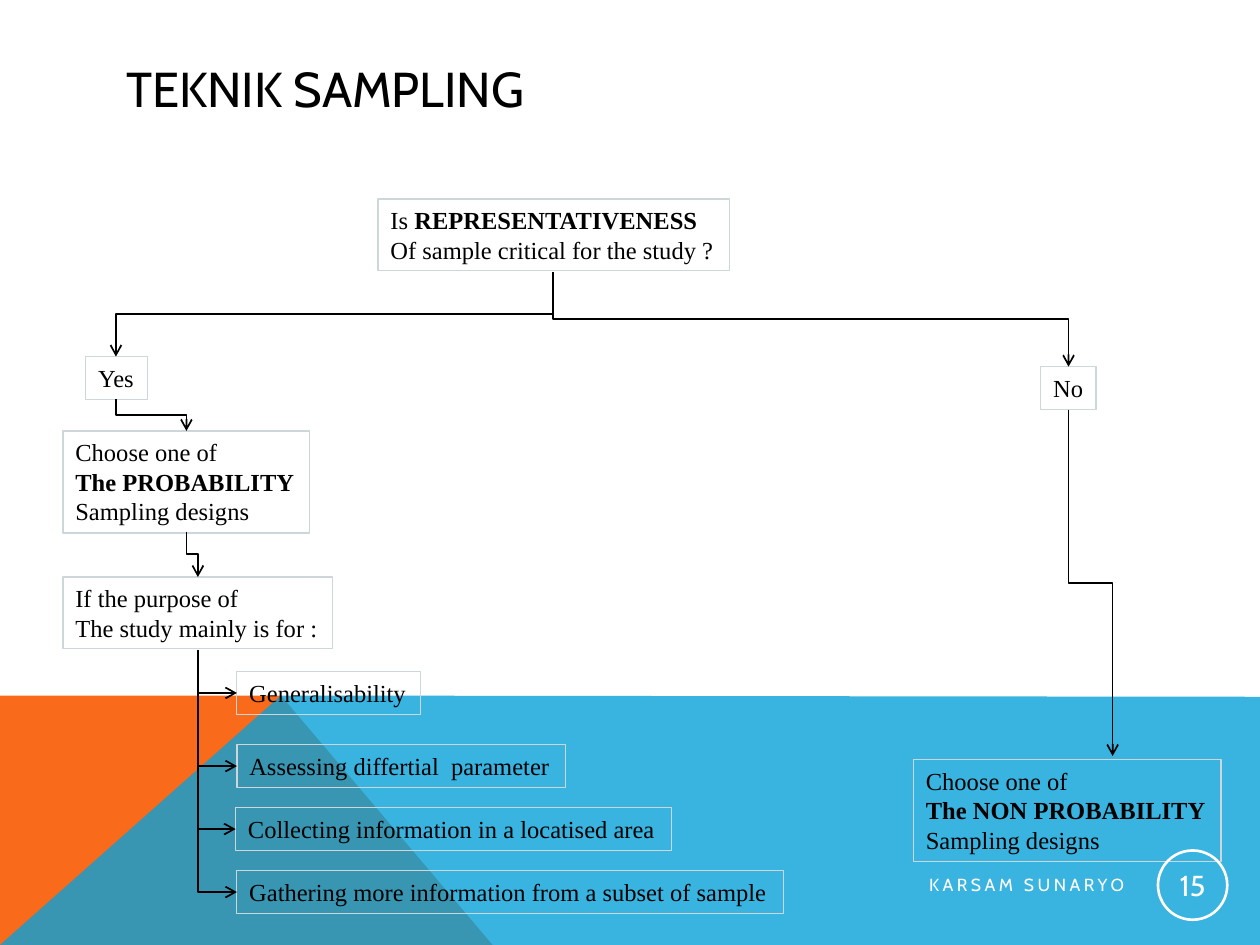
from dataclasses import dataclass

from lxml.etree import SubElement
from pptx import Presentation
from pptx.dml.color import RGBColor
from pptx.enum.shapes import MSO_CONNECTOR, MSO_SHAPE
from pptx.enum.text import MSO_ANCHOR, MSO_AUTO_SIZE, PP_ALIGN
from pptx.oxml.ns import qn
from pptx.util import Inches, Pt

HUES = {
    "black": "000000",
    "white": "FFFFFF",
    "orange": "F96A1B",
    "blue": "08A1D9",
    "frame": "CDD7D9",
}
SERIF, SANS = "Times New Roman", "Cabin"


@dataclass
class Box:
    left: float
    top: float
    width: float
    height: float
    lines: tuple[str, ...]
    bold: str = ""


@dataclass
class Link:
    start: tuple[float, float]
    end: tuple[float, float]
    kind: str = "bentConnector3"


def color(name: str) -> RGBColor:
    return RGBColor.from_string(HUES[name])


def style(item, face: str, size: float, hue: str) -> None:
    item.font.name = face
    item.font.size = Pt(size)
    item.font.color.rgb = color(hue)


def draw_area(slide, points: list, hue: str, alpha: int = 100) -> None:
    spots = [(Inches(x), Inches(y)) for x, y in points]
    builder = slide.shapes.build_freeform(*spots[0], scale=1.0)
    builder.add_line_segments(spots[1:], close=True)
    area = builder.convert_to_shape()
    area.shadow.inherit = False
    area.line.fill.background()
    area.fill.solid()
    area.fill.fore_color.rgb = color(hue)
    if alpha < 100:
        tint = area.fill._xPr.find(".//" + qn("a:srgbClr"))
        SubElement(tint, qn("a:alpha")).set("val", str(alpha * 1000))


def draw_box(slide, box: Box) -> None:
    shape = slide.shapes.add_shape(
        MSO_SHAPE.RECTANGLE,
        *map(Inches, (box.left, box.top, box.width, box.height)))
    shape.shadow.inherit = False
    shape.fill.background()
    shape.line.color.rgb = color("frame")
    shape.line.width = Pt(0.75)
    frame = shape.text_frame
    frame.word_wrap = False
    frame.auto_size = MSO_AUTO_SIZE.SHAPE_TO_FIT_TEXT
    frame.vertical_anchor = MSO_ANCHOR.TOP
    for i, line in enumerate(box.lines):
        para = frame.add_paragraph() if i else frame.paragraphs[0]
        para.alignment = PP_ALIGN.LEFT
        plain, mark, _ = line.partition(box.bold) if box.bold else (line, "", "")
        if plain:
            para.add_run().text = plain
        if mark:
            run = para.add_run()
            run.text = mark
            run.font.bold = True
        style(para, SERIF, 14, "black")


def draw_link(slide, link: Link) -> None:
    (x1, y1), (x2, y2) = link.start, link.end
    mid_x, mid_y = (x1 + x2) / 2, (y1 + y2) / 2
    half_w, half_h = (y2 - y1) / 2, abs(x2 - x1) / 2
    side = 1 if x2 > x1 else -1
    line = slide.shapes.add_connector(
        MSO_CONNECTOR.ELBOW,
        Inches(mid_x + side * half_w), Inches(mid_y - half_h),
        Inches(mid_x - side * half_w), Inches(mid_y + half_h))
    line.line.color.rgb = color("black")
    line.line.width = Pt(1)
    props = line._element.spPr
    turn = 270 if side > 0 else 90
    props.find(qn("a:xfrm")).set("rot", str(turn * 60000))
    props.find(qn("a:prstGeom")).set("prst", link.kind)
    SubElement(props.find(qn("a:ln")), qn("a:tailEnd")).set("type", "arrow")
    SubElement(props, qn("a:effectLst"))


def draw_title(slide) -> None:
    title = slide.shapes.title
    title.left, title.top, title.width, title.height = map(
        Inches, (0.9, 0.4, 8.22, 0.6))
    title.text_frame.text = "TEKNIK SAMPLING"
    title.text_frame.vertical_anchor = MSO_ANCHOR.MIDDLE
    para = title.text_frame.paragraphs[0]
    para.alignment = PP_ALIGN.LEFT
    style(para, SANS, 28, "black")


def draw_footer(slide) -> None:
    note = slide.shapes.add_textbox(*map(Inches, (3.85, 6.87, 5.17, 0.3)))
    frame = note.text_frame
    frame.word_wrap = True
    frame.vertical_anchor = MSO_ANCHOR.MIDDLE
    para = frame.paragraphs[0]
    para.alignment = PP_ALIGN.RIGHT
    run = para.add_run()
    run.text = "KARSAM SUNARYO"
    style(run, SANS, 10, "white")
    run._r.get_or_add_rPr().set("spc", "200")

    badge = slide.shapes.add_shape(
        MSO_SHAPE.OVAL, *map(Inches, (9.19, 6.75, 0.55, 0.55)))
    badge.shadow.inherit = False
    badge.fill.background()
    badge.line.color.rgb = color("white")
    badge.line.width = Pt(1.5)
    frame = badge.text_frame
    frame.margin_left = frame.margin_right = Inches(0.01)
    frame.margin_top = frame.margin_bottom = Inches(0.01)
    frame.vertical_anchor = MSO_ANCHOR.MIDDLE
    frame.text = "15"
    para = frame.paragraphs[0]
    para.alignment = PP_ALIGN.CENTER
    style(para, SANS, 16.5, "white")


def main() -> None:
    deck = Presentation()
    deck.slide_width, deck.slide_height = Inches(10), Inches(7.5)
    slide = deck.slides.add_slide(deck.slide_layouts[5])

    draw_area(slide, [(0, 7.5), (0, 5.52), (2.23, 5.52), (3.91, 7.5)], "orange")
    draw_area(slide, [(0, 7.5), (2.23, 5.52), (10, 5.53), (10, 7.5)], "blue", 80)
    draw_title(slide)

    boxes = [
        Box(3, 1.58, 2.79, 0.57,
            ("Is REPRESENTATIVENESS", "Of sample critical for the study ?"),
            "REPRESENTATIVENESS"),
        Box(0.68, 2.83, 0.49, 0.34, ("Yes",)),
        Box(8.26, 2.91, 0.44, 0.34, ("No",)),
        Box(0.5, 3.42, 1.96, 0.81,
            ("Choose one of", "The PROBABILITY", "Sampling designs"),
            "The PROBABILITY"),
        Box(7.25, 6.03, 2.44, 0.81,
            ("Choose one of", "The NON PROBABILITY", "Sampling designs"),
            "The NON PROBABILITY"),
        Box(0.5, 4.58, 2.14, 0.57,
            ("If the purpose of", "The study mainly is for :")),
    ]
    goals = [
        Box(1.88, 5.33, 1.46, 0.34, ("Generalisability",)),
        Box(1.88, 5.91, 2.61, 0.34, ("Assessing differtial  parameter",)),
        Box(1.87, 6.41, 3.46, 0.34,
            ("Collecting information in a locatised area",)),
        Box(1.88, 6.91, 4.34, 0.34,
            ("Gathering more information from a subset of sample",)),
    ]
    links = [
        Link((4.39, 2.16), (0.92, 2.83)),
        Link((4.39, 2.16), (8.48, 2.91)),
        Link((0.92, 3.17), (1.48, 3.42)),
        Link((8.48, 3.25), (8.83, 6)),
        Link((1.48, 4.22), (1.57, 4.58)),
    ]
    links += [
        Link((1.57, 5.16), (goal.left, goal.top + goal.height / 2),
             "bentConnector2")
        for goal in goals
    ]
    for box in boxes + goals:
        draw_box(slide, box)
    for link in links:
        draw_link(slide, link)
    draw_footer(slide)
    deck.save("out.pptx")


if __name__ == "__main__":
    main()
